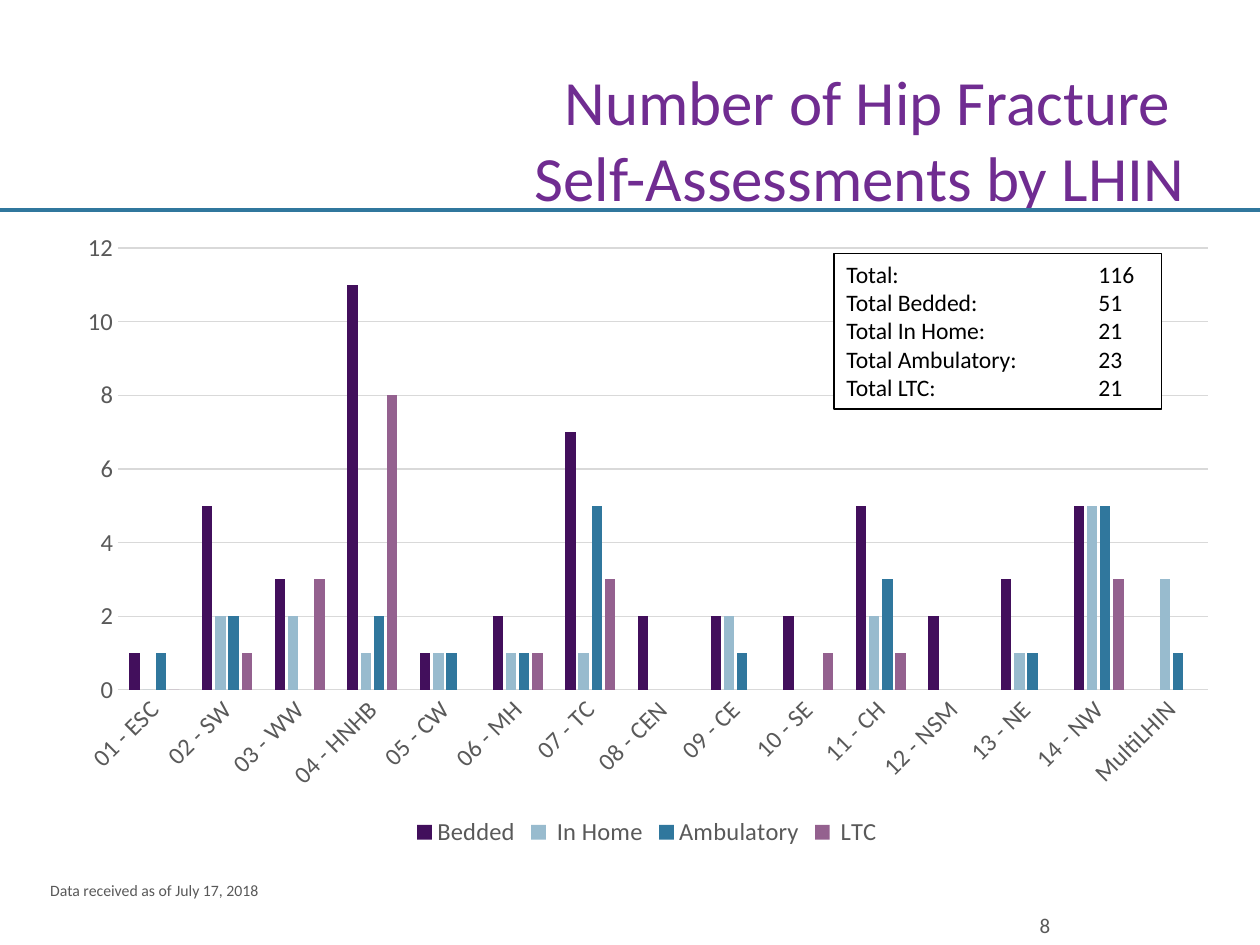
from lxml import etree
from pptx import Presentation
from pptx import util as u
from pptx.chart.data import CategoryChartData
from pptx.dml.color import RGBColor
from pptx.enum import chart as charts, shapes, text
from pptx.oxml import ns

WIDTH, HEIGHT = u.Inches(10), u.Inches(7.5)
FONT = "Calibri"
COLORS = {
    "title": "702C91", "rule": "30779D", "muted": "595959", "grid": "D9D9D9",
    "black": "000000", "white": "FFFFFF",
    "Bedded": "420F5C", " In Home": "98BBCE", "Ambulatory": "30779D", " LTC": "94618F",
}
REGIONS = ["01 - ESC", "02 - SW", "03 - WW", "04 - HNHB", "05 - CW", "06 - MH",
           "07 - TC", "08 - CEN", "09 - CE", "10 - SE", "11 - CH", "12 - NSM",
           "13 - NE", "14 - NW", "MultiLHIN"]
ASSESSMENTS = {
    "Bedded": [1, 5, 3, 11, 1, 2, 7, 2, 2, 2, 5, 2, 3, 5, None],
    " In Home": [0, 2, 2, 1, 1, 1, 1, None, 2, None, 2, None, 1, 5, 3],
    "Ambulatory": [1, 2, None, 2, 1, 1, 5, None, 1, None, 3, None, 1, 5, 1],
    " LTC": [0, 1, 3, 8, None, 1, 3, None, None, 1, 1, None, None, 3, None],
}
TOTALS = [("Total:", 116), ("Total Bedded:", 51), ("Total In Home:", 21),
          ("Total Ambulatory:", 23), ("Total LTC:", 21)]


def box(left, top, width, height):
    """Turn shares of the slide's size into lengths."""
    return (int(left * WIDTH), int(top * HEIGHT), int(width * WIDTH), int(height * HEIGHT))


def rgb(name):
    return RGBColor.from_string(COLORS[name])


def style_font(font, size, color):
    font.name, font.size = FONT, u.Pt(size)
    font.color.rgb = rgb(color)


def style_line(line, color, width):
    line.color.rgb = rgb(color)
    line.width = u.Pt(width)


def add_title(slide, area):
    title = slide.shapes.title
    title.left, title.top, title.width, title.height = area
    frame = title.text_frame
    frame.auto_size = text.MSO_AUTO_SIZE.NONE
    frame.vertical_anchor = text.MSO_ANCHOR.BOTTOM
    paragraph = frame.paragraphs[0]
    paragraph.text = "Number of Hip Fracture \vSelf-Assessments by LHIN"
    paragraph.alignment = text.PP_ALIGN.RIGHT
    style_font(paragraph.font, 36, "title")


def add_rule(slide, area):
    left, top, width, height = area
    rule = slide.shapes.add_connector(shapes.MSO_CONNECTOR.STRAIGHT,
                                      left, top, left + width, top + height)
    style_line(rule.line, "rule", 2)
    etree.SubElement(rule._element.spPr, ns.qn("a:effectLst"))


def add_chart(slide, area):
    data = CategoryChartData()
    data.categories = REGIONS
    for name, values in ASSESSMENTS.items():
        data.add_series(name, values)
    chart = slide.shapes.add_chart(charts.XL_CHART_TYPE.COLUMN_CLUSTERED, *area, data).chart
    style_font(chart.font, 10, "black")
    chart.has_title = False
    chart.has_legend = True
    chart.legend.position = charts.XL_LEGEND_POSITION.BOTTOM
    chart.legend.include_in_layout = False
    style_font(chart.legend.font, 14, "muted")

    plot = chart.plots[0]
    plot.vary_by_categories = False
    plot.gap_width, plot.overlap = 219, -27
    for series in plot.series:
        series.format.fill.solid()
        series.format.fill.fore_color.rgb = rgb(series.name)

    for axis in (chart.category_axis, chart.value_axis):
        axis.major_tick_mark = axis.minor_tick_mark = charts.XL_TICK_MARK.NONE
        style_font(axis.tick_labels.font, 14, "muted")
    style_line(chart.category_axis.format.line, "grid", 0.75)
    label_body = chart.category_axis._element.find(ns.qn("c:txPr")).find(ns.qn("a:bodyPr"))
    label_body.set("rot", str(-45 * 60000))

    values = chart.value_axis
    values.minimum_scale, values.maximum_scale, values.major_unit = 0, 12, 2
    values.format.line.fill.background()
    style_line(values.major_gridlines.format.line, "grid", 0.75)


def add_totals(slide, area):
    panel = slide.shapes.add_shape(shapes.MSO_SHAPE.RECTANGLE, *area)
    panel.shadow.inherit = False
    panel.fill.solid()
    panel.fill.fore_color.rgb = rgb("white")
    style_line(panel.line, "black", 0.75)
    frame = panel.text_frame
    frame.word_wrap = True
    frame.vertical_anchor = text.MSO_ANCHOR.TOP
    for index, (label, total) in enumerate(TOTALS):
        paragraph = frame.add_paragraph() if index else frame.paragraphs[0]
        paragraph.text = f"{label}\t{total}"
        paragraph.alignment = text.PP_ALIGN.LEFT
        stops = etree.SubElement(paragraph._p.get_or_add_pPr(), ns.qn("a:tabLst"))
        etree.SubElement(stops, ns.qn("a:tab"), pos=str(u.Inches(2)), algn="l")
        style_font(paragraph.font, 13.5, "black")


def add_note(slide, area, words, size):
    frame = slide.shapes.add_textbox(*area).text_frame
    frame.word_wrap = True
    frame.vertical_anchor = text.MSO_ANCHOR.MIDDLE
    frame.paragraphs[0].text = words
    style_font(frame.paragraphs[0].font, size, "muted")
    return frame


def main():
    presentation = Presentation()
    presentation.slide_width, presentation.slide_height = WIDTH, HEIGHT
    slide = presentation.slides.add_slide(presentation.slide_layouts[5])
    add_rule(slide, box(0, 0.222, 1, 0))
    add_title(slide, box(0.05, 0, 0.9, 0.233))
    page_number = add_note(slide, box(0.822, 0.959, 0.035, 0.04), "8", 12)
    page_number.margin_left, page_number.margin_right = u.Inches(0.03), u.Inches(0.05)
    add_note(slide, box(0.03, 0.925, 0.382, 0.033), "Data received as of July 17, 2018", 9)
    add_chart(slide, box(0.05, 0.233, 0.927, 0.669))
    add_totals(slide, box(0.662, 0.268, 0.26, 0.165))
    presentation.save("out.pptx")


if __name__ == "__main__":
    main()
